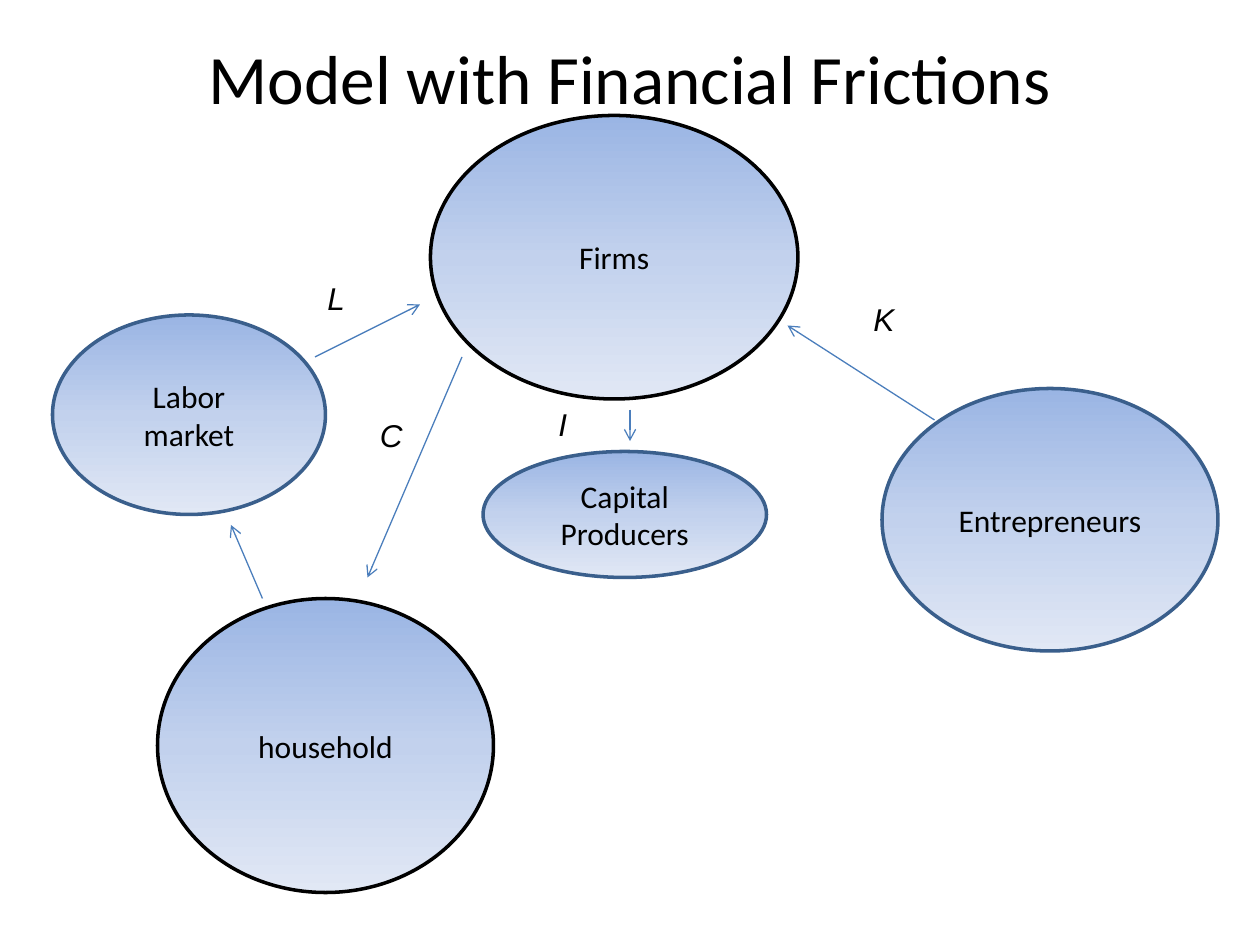
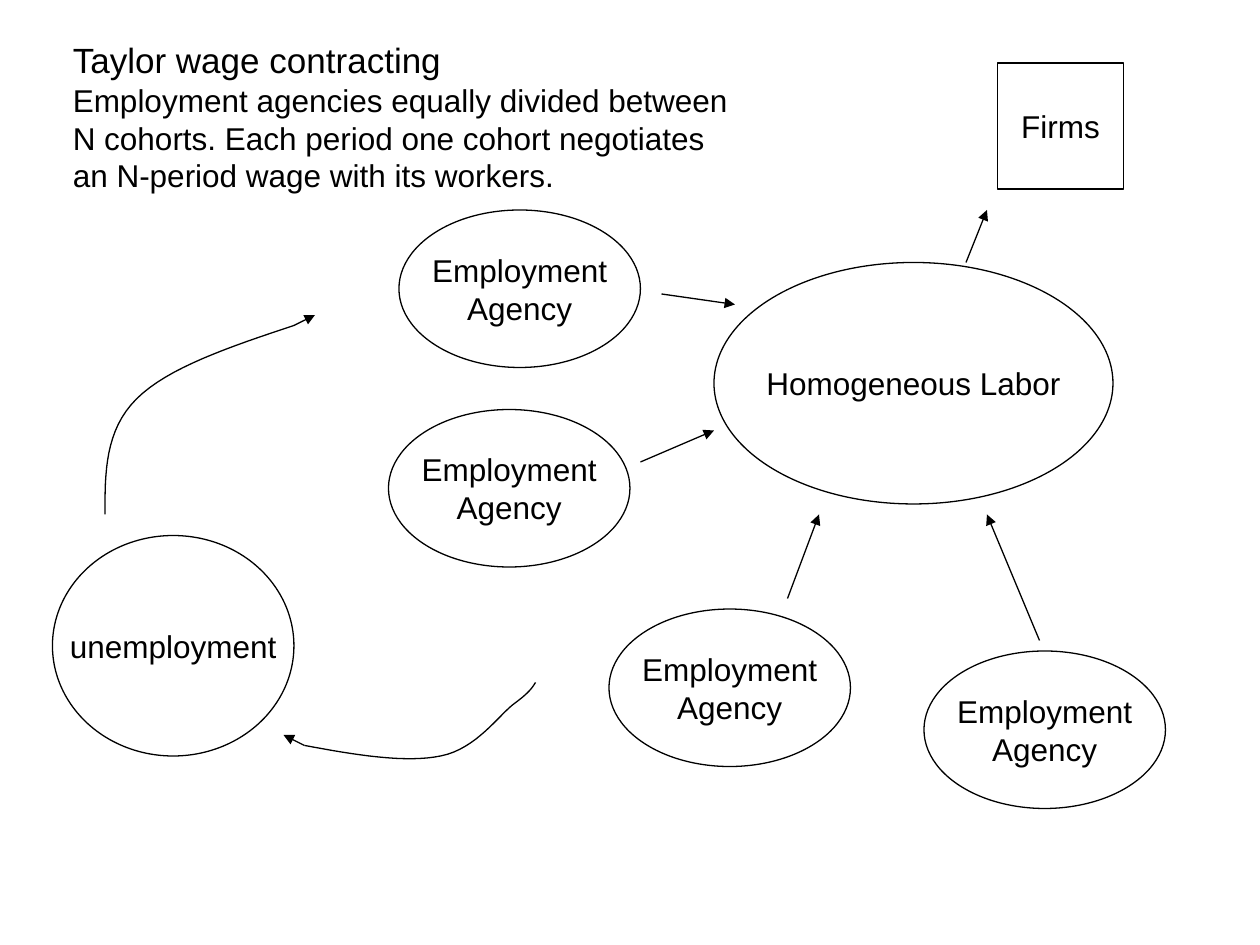
from copy import deepcopy

from lxml.etree import SubElement
from pptx import Presentation
from pptx.dml.color import RGBColor
from pptx.enum.shapes import MSO_CONNECTOR, MSO_SHAPE
from pptx.enum.text import MSO_ANCHOR, PP_ALIGN
from pptx.oxml.ns import qn
from pptx.util import Cm, Pt

BLACK = RGBColor(0x00, 0x00, 0x00)
WHITE = RGBColor(0xFF, 0xFF, 0xFF)
NAVY = RGBColor(0x3A, 0x5F, 0x8C)
BLUE = RGBColor(0x4B, 0x7E, 0xBC)
SHADES = [RGBColor(0x9A, 0xB5, 0xE4), RGBColor(0xC2, 0xD1, 0xED),
          RGBColor(0xE1, 0xE8, 0xF5)]

STEP = 2.54 / 12  # both diagrams sit on a grid of twelve steps to the inch
PAGE = (0, 0, 120, 90)

HEAD = {"name": "Calibri", "size": Pt(39.6)}
NODE = {"name": "Calibri", "size": Pt(18)}
BODY = {"name": "Arial", "size": Pt(18)}
LEAD = {"name": "Arial", "size": Pt(20)}
SIGN = {**BODY, "italic": True}


def grid(*steps):
    return [Cm(n * STEP) for n in steps]


def shift(box, spot):
    """Turn a spot counted from the box corner into page lengths."""
    left, top, *size = spot
    return grid(box[0] + left, box[1] + top, *size)


def write(shape, lines, style, align=PP_ALIGN.CENTER,
          anchor=MSO_ANCHOR.MIDDLE, wrap=True):
    frame = shape.text_frame
    frame.word_wrap = wrap
    frame.vertical_anchor = anchor
    frame.text = lines
    for para in frame.paragraphs:
        para.alignment = align
        for key, value in style.items():
            setattr(para.font, key, value)
        para.font.color.rgb = BLACK


def stroke(line, color, width):
    line.color.rgb = color
    line.width = Pt(width)


def shade(shape):
    """Fill with the three blues, dark at the top."""
    fill = shape.fill
    fill.gradient()
    fill.gradient_angle = 270
    stops = shape.element.spPr.find(".//" + qn("a:gsLst"))
    stops.append(deepcopy(stops[0]))
    for rank, (stop, color) in enumerate(zip(fill.gradient_stops, SHADES)):
        stop.color.rgb = color
        stop.position = rank / 2


def node(slide, box, spot, label, style, rim, width, wrap, kind=MSO_SHAPE.OVAL):
    shape = slide.shapes.add_shape(kind, *shift(box, spot))
    shape.shadow.inherit = False
    stroke(shape.line, rim, width)
    write(shape, label, style, wrap=wrap)
    return shape


def soft(slide, box, spot, label, rim):
    shade(node(slide, box, spot, label, NODE, rim, 2, True))


def plain(slide, box, spot, label, kind=MSO_SHAPE.OVAL):
    shape = node(slide, box, spot, label, BODY, BLACK, 0.75, False, kind)
    shape.fill.solid()
    shape.fill.fore_color.rgb = WHITE


def note(slide, box, spot, lines, style, **setup):
    text = slide.shapes.add_textbox(*shift(box, spot))
    write(text, lines, style, **setup)
    return text


def arrow(slide, box, start, end, color, tip):
    line = slide.shapes.add_connector(
        MSO_CONNECTOR.STRAIGHT, *shift(box, start), *shift(box, end))
    stroke(line.line, color, 0.75)
    props = line.element.spPr
    SubElement(props.find(qn("a:ln")), qn("a:tailEnd"), type=tip)
    SubElement(props, qn("a:effectLst"))


def bend(start, curves, count=16):
    """List points along joined cubic curves, each given as three points."""
    points = [start]
    for one, two, end in curves:
        for k in range(1, count + 1):
            t = k / count
            u = 1 - t
            points.append(tuple(
                u**3 * a + 3 * u * u * t * b + 3 * u * t * t * c + t**3 * d
                for a, b, c, d in zip(start, one, two, end)))
        start = end
    return points


def sweep(slide, box, start, curves, tip):
    """Draw a curve that ends in a short straight arrow."""
    first, *rest = [shift(box, spot) for spot in bend(start, curves)]
    pen = slide.shapes.build_freeform(*first)
    pen.add_line_segments(rest, close=False)
    curve = pen.convert_to_shape()
    curve.shadow.inherit = False
    curve.fill.background()
    stroke(curve.line, BLACK, 0.75)
    arrow(slide, box, curves[-1][-1], tip, BLACK, "triangle")


def model(slide, box):
    note(slide, box, (6, 3.6, 108, 7.4), "Model with Financial Frictions", HEAD)
    for spot, label, rim in [
        ((41, 11, 35, 27), "Firms", BLACK),
        ((15, 57, 32, 28), "household", BLACK),
        ((84, 37, 32, 25), "Entrepreneurs", NAVY),
        ((5, 30, 26, 19), "Labor market", NAVY),
        ((46, 43, 27, 12), "Capital Producers", NAVY),
    ]:
        soft(slide, box, spot, label, rim)
    for start, end in [
        ((25, 57), (22, 50)),
        ((89, 40), (75, 31)),
        ((30, 34), (40, 29)),
        ((44, 34), (35, 55)),
        ((60, 39), (60, 42)),
    ]:
        arrow(slide, box, start, end, BLUE, "arrow")
    for label, spot in {"L": (30, 26), "C": (35, 39),
                        "I": (52, 38), "K": (82, 28)}.items():
        note(slide, box, (*spot, 4, 4.8), label, SIGN,
             align=PP_ALIGN.LEFT, anchor=MSO_ANCHOR.TOP)


def wages(slide, box):
    plain(slide, box, (68, 25, 38, 23), "Homogeneous Labor")
    for spot in [(38, 20), (37, 39), (58, 58), (88, 62)]:
        plain(slide, box, (*spot, 23, 15), "Employment\nAgency")
    plain(slide, box, (5, 51, 23, 21), "unemployment")
    plain(slide, box, (95, 6, 12, 12), "Firms", MSO_SHAPE.RECTANGLE)
    for start, end in [
        ((63, 28), (70, 29)),
        ((61, 44), (68, 41)),
        ((75, 57), (78, 49)),
        ((99, 61), (94, 49)),
        ((92, 25), (94, 20)),
    ]:
        arrow(slide, box, start, end, BLACK, "triangle")
    sweep(slide, box, (10, 49), [
        ((10, 45), (10, 41), (13, 38)),
        ((16, 35), (22, 33), (28, 31)),
    ], (30, 30))
    sweep(slide, box, (51, 65), [
        ((50.75, 65.4), (50.5, 65.9), (49, 67)),
        ((47.5, 68.1), (45.4, 71.3), (42, 72)),
        ((38.6, 72.7), (33.8, 71.9), (29, 71)),
    ], (27, 70))
    text = note(slide, box, (5.75, 3.1, 65.6, 16.1),
                "Taylor wage contracting\n"
                "Employment agencies equally divided between\n"
                "N cohorts. Each period one cohort negotiates\n"
                "an N-period wage with its workers.",
                BODY, align=PP_ALIGN.LEFT, anchor=MSO_ANCHOR.TOP, wrap=False)
    text.text_frame.paragraphs[0].font.size = LEAD["size"]


def main():
    deck = Presentation()
    deck.slide_width, deck.slide_height = grid(*PAGE[2:])
    for draw in (model, wages):
        draw(deck.slides.add_slide(deck.slide_layouts[6]), PAGE)
    deck.save("out.pptx")


if __name__ == "__main__":
    main()
